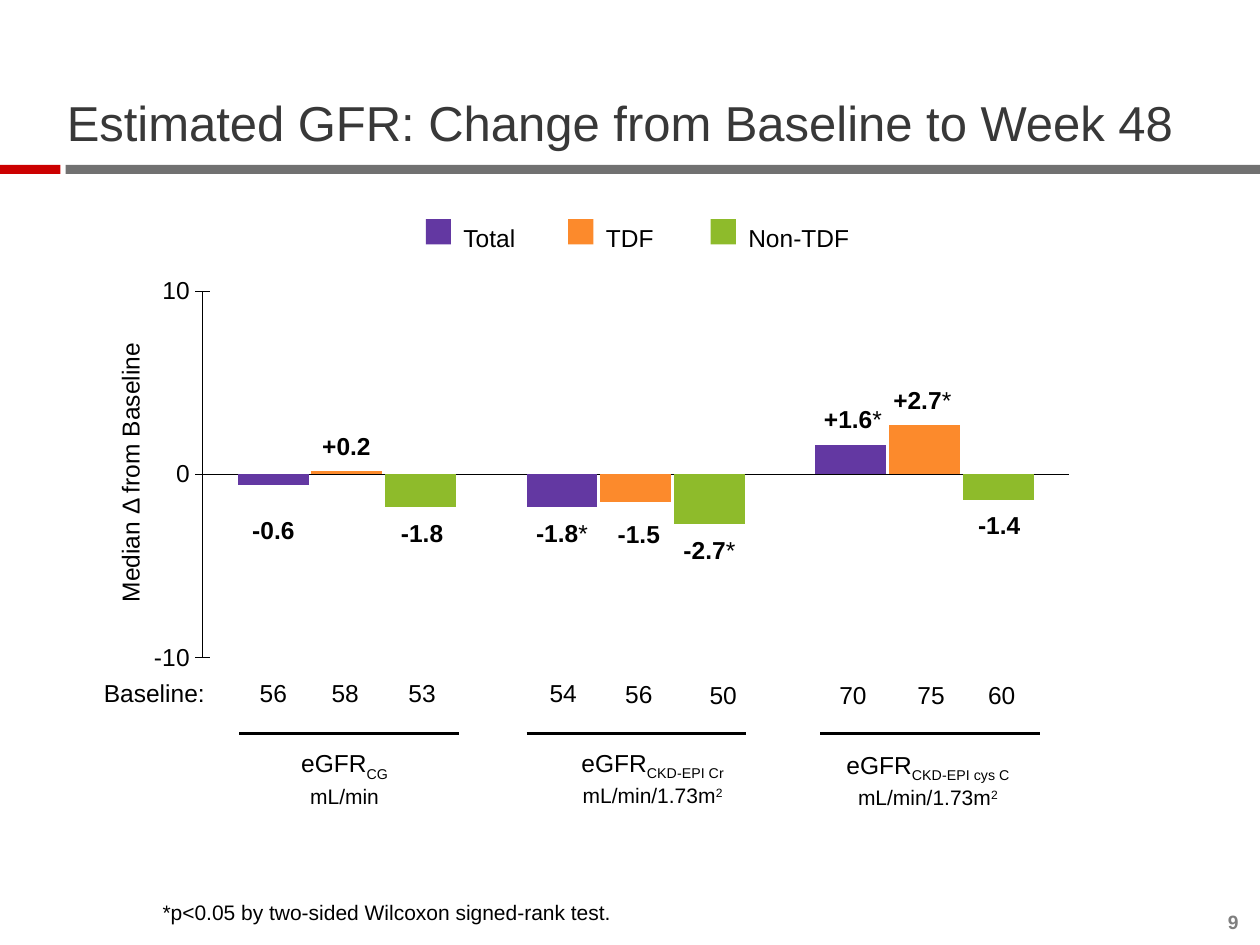
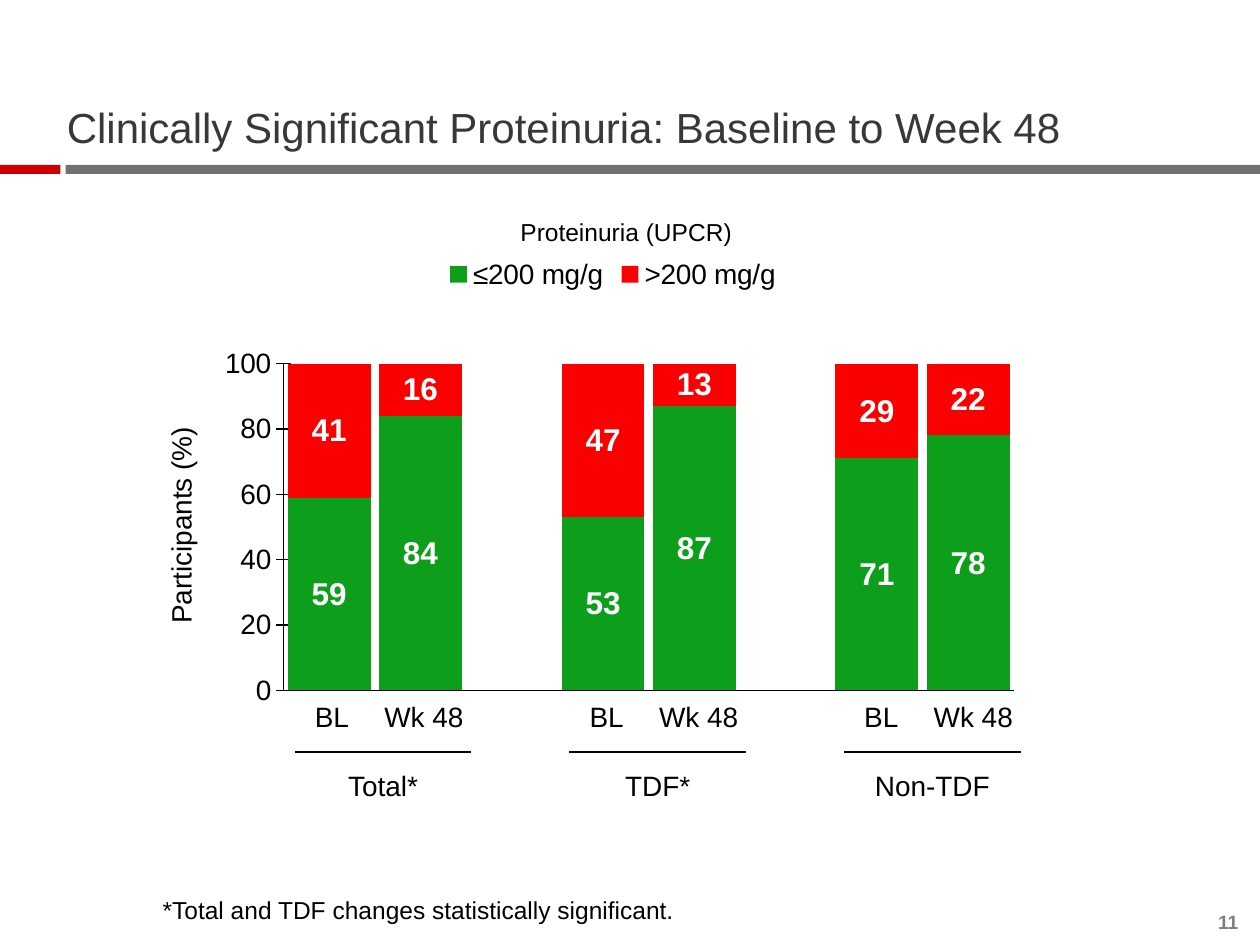
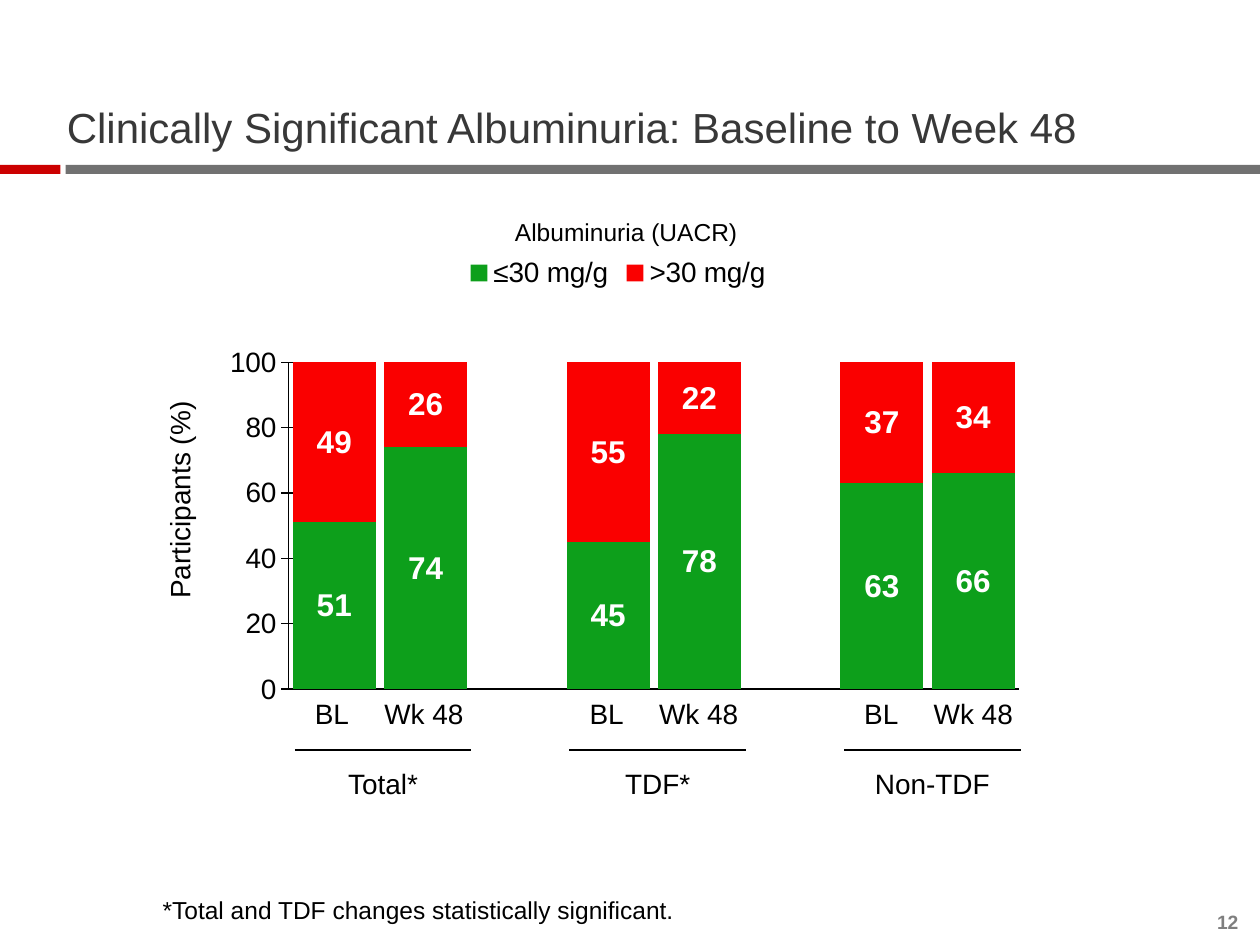
"""Build three slides on changes in kidney function from baseline to week 48."""
from dataclasses import dataclass

from lxml import etree
from pptx import Presentation
from pptx import util as u
from pptx.chart import data as chart_data
from pptx.dml import color
from pptx.enum import chart as charts, shapes, text
from pptx.oxml import ns


@dataclass(frozen=True)
class Theme:
    font: str = "Arial"
    chart_font: str = "Arial Narrow"
    ink: str = "000000"
    title: str = "383838"
    paper: str = "FFFFFF"
    number: str = "7F7F7F"
    grey_band: str = "717171"
    red_band: str = "CC0000"
    purple: str = "6338A2"
    orange: str = "FC8A2C"
    lime: str = "8EBB2B"
    green: str = "0D9F1B"
    red: str = "FA0000"
    title_large: int = 28
    title_small: int = 24
    label: int = 14
    large_label: int = 16
    bar_label: int = 18
    unit: int = 12
    page_number: int = 11


THEME = Theme()
ALIGN, ANCHOR = text.PP_ALIGN, text.MSO_ANCHOR

BANDS = [(0.52, 9.48, THEME.grey_band), (0, 0.48, THEME.red_band)]

GFR = {
    "title": "Estimated GFR: Change from Baseline to Week 48",
    "number": "9",
    "note": "*p<0.05 by two-sided Wilcoxon signed-rank test.",
    "axis": "Median Δ from Baseline",
    "legend": [("Total", THEME.purple), ("TDF", THEME.orange), ("Non-TDF", THEME.lime)],
    "series": [
        ("Series 1", [-0.6, -1.8, 1.6], THEME.purple),
        ("Series 2", [0.2, -1.5, 2.7], THEME.orange),
        ("Series 3", [-1.8, -2.7, -1.4], THEME.lime),
    ],
    "changes": [
        ("-0.6", "", 2.17, 4.01), ("+0.2", "", 2.75, 3.34), ("-1.8", "", 3.35, 4.03),
        ("-1.8", "*", 4.46, 4.03), ("-1.5", "", 5.07, 4.04), ("-2.7", "*", 5.63, 4.17),
        ("+1.6", "*", 6.77, 3.13), ("+2.7", "*", 7.32, 2.98), ("-1.4", "", 7.93, 3.97),
    ],
    "baselines": [
        ("56", 2.17, 5.3), ("58", 2.74, 5.3), ("53", 3.35, 5.3),
        ("54", 4.47, 5.3), ("56", 5.07, 5.31), ("50", 5.74, 5.32),
        ("70", 6.77, 5.32), ("75", 7.39, 5.32), ("60", 7.95, 5.32),
    ],
    "measures": [
        ("CG ", "mL/min", "", (2.13, 5.96, 1.21, 0.42), 1.9),
        ("CKD-EPI Cr ", "mL/min/1.73m", "2", (4.38, 5.95, 1.6, 0.43), 4.18),
        ("CKD-EPI cys C ", "mL/min/1.73m", "2", (6.51, 5.95, 1.71, 0.46), 6.51),
    ],
}

ARMS = ["Total*", "TDF*", "Non-TDF"]
VISITS = ["BL", "Wk 48"]
STACKED = [
    {
        "title": "Clinically Significant Proteinuria: Baseline to Week 48",
        "number": "11",
        "heading": "Proteinuria (UPCR)",
        "series": [
            ("≤200 mg/g", [59, 84, None, 53, 87, None, 71, 78], THEME.green),
            (">200 mg/g", [41, 16, None, 47, 13, None, 29, 22], THEME.red),
        ],
        "chart_at": (1.53, 1.94),
        "axis_at": (0.85, 3.96),
        "visits_top": 5.58,
    },
    {
        "title": "Clinically Significant Albuminuria: Baseline to Week 48",
        "number": "12",
        "heading": "Albuminuria (UACR)",
        "series": [
            ("≤30 mg/g", [51, 74, None, 45, 78, None, 63, 66], THEME.green),
            (">30 mg/g", [49, 26, None, 55, 22, None, 37, 34], THEME.red),
        ],
        "chart_at": (1.57, 1.93),
        "axis_at": (0.84, 3.76),
        "visits_top": 5.56,
    },
]
STACKED_NOTE = "*Total and TDF changes statistically significant."


def rgb(value):
    return color.RGBColor.from_string(value)


def inches(values):
    return [u.Inches(value) for value in values]


def style_font(font, size, ink=THEME.ink, bold=False, name=THEME.font):
    font.name, font.size, font.bold = name, u.Pt(size), bold
    font.color.rgb = rgb(ink)


def add_span(para, words, size, ink=THEME.ink, bold=False, base=0):
    span = para.add_run()
    span.text = words
    style_font(span.font, size, ink, bold)
    if base:
        span.font._element.set("baseline", str(base * 1000))


def set_frame(frame, anchor, inset=(0, 0), wrap=True):
    frame.auto_size = text.MSO_AUTO_SIZE.NONE
    frame.word_wrap = wrap
    frame.vertical_anchor = anchor
    frame.margin_left = frame.margin_right = u.Inches(inset[0])
    frame.margin_top = frame.margin_bottom = u.Inches(inset[1])


def add_rect(page, at, fill):
    rect = page.shapes.add_shape(shapes.MSO_SHAPE.RECTANGLE, *inches(at))
    rect.shadow.inherit = False
    rect.fill.solid()
    rect.fill.fore_color.rgb = rgb(fill)
    rect.line.fill.background()
    return rect


def add_text(page, at, spans, align=ALIGN.CENTER, anchor=ANCHOR.MIDDLE, inset=(0, 0),
             spacing=0.9, after=0, wrap=True, fill=None, turn=0):
    """Add a text box, or a filled rectangle, holding one paragraph of spans."""
    box = add_rect(page, at, fill) if fill else page.shapes.add_textbox(*inches(at))
    box.rotation = turn
    set_frame(box.text_frame, anchor, inset, wrap)
    para = box.text_frame.paragraphs[0]
    para.alignment, para.line_spacing, para.space_after = align, spacing, u.Pt(after)
    for span in spans:
        add_span(para, *span)


def add_rule(page, left, top, length, width):
    rule = page.shapes.add_connector(
        shapes.MSO_CONNECTOR.STRAIGHT, *inches((left, top, left + length, top)))
    rule.line.color.rgb = rgb(THEME.ink)
    rule.line.width = u.Pt(width)
    etree.SubElement(rule.element.spPr, ns.qn("a:effectLst"))


def add_page(deck, title, title_size, number, note, note_size):
    """Add a slide with its title, bands, footnote and page number."""
    page = deck.slides.add_slide(deck.slide_layouts[5])
    for left, width, fill in BANDS:
        add_rect(page, (left, 1.31, width, 0.07), fill)
    heading = page.shapes.title
    heading.left, heading.top, heading.width, heading.height = inches((0.53, 0.47, 9, 0.74))
    set_frame(heading.text_frame, ANCHOR.BOTTOM)
    para = heading.text_frame.paragraphs[0]
    para.alignment, para.line_spacing = ALIGN.LEFT, 0.9
    add_span(para, title, title_size, THEME.title)
    add_text(page, (9.56, 7.23, 0.27, 0.18),
             [(number, THEME.page_number, THEME.number, True)],
             ALIGN.RIGHT, ANCHOR.BOTTOM, spacing=1)
    add_text(page, (1.29, 6.84, 8.28, 0.5), [(note, note_size)],
             ALIGN.LEFT, ANCHOR.BOTTOM, spacing=1)
    return page


def set_plot_area(chart, bounds):
    plot_area = chart.element.find(".//" + ns.qn("c:plotArea"))
    for former in plot_area.findall(ns.qn("c:layout")):
        plot_area.remove(former)
    layout = etree.Element(ns.qn("c:layout"))
    manual = etree.SubElement(layout, ns.qn("c:manualLayout"))
    settings = [("layoutTarget", "inner"), ("xMode", "edge"), ("yMode", "edge")]
    settings += zip("xywh", bounds)
    for name, value in settings:
        etree.SubElement(manual, ns.qn("c:" + name)).set("val", str(value))
    plot_area.insert(0, layout)


def add_columns(page, kind, at, series, scale, gap, overlap, bounds, axis_size, font_name):
    """Add a column chart with a bare category axis and return it."""
    data = chart_data.CategoryChartData()
    data.categories = [str(index + 1) for index in range(len(series[0][1]))]
    for name, values, _ in series:
        data.add_series(name, values)
    chart = page.shapes.add_chart(kind, *inches(at), data).chart
    style_font(chart.font, THEME.bar_label, name=font_name)
    chart.has_title = chart.has_legend = False
    plot = chart.plots[0]
    plot.gap_width, plot.overlap, plot.vary_by_categories = gap, overlap, False
    for column, (_, _, fill) in zip(plot.series, series):
        column.invert_if_negative = False
        column.format.fill.solid()
        column.format.fill.fore_color.rgb = rgb(fill)
    for axis in (chart.category_axis, chart.value_axis):
        axis.has_major_gridlines = False
        axis.format.line.color.rgb = rgb(THEME.ink)
        axis.format.line.width = u.Pt(0.75)
    chart.category_axis.major_tick_mark = charts.XL_TICK_MARK.NONE
    chart.category_axis.tick_label_position = charts.XL_TICK_LABEL_POSITION.NONE
    axis = chart.value_axis
    axis.minimum_scale, axis.maximum_scale, axis.major_unit = scale
    axis.major_tick_mark = charts.XL_TICK_MARK.CROSS
    style_font(axis.tick_labels.font, axis_size)
    set_plot_area(chart, bounds)
    return chart


def build_gfr(deck):
    page = add_page(deck, GFR["title"], THEME.title_large, GFR["number"],
                    GFR["note"], THEME.unit)
    add_columns(page, charts.XL_CHART_TYPE.COLUMN_CLUSTERED, (0.98, 1.98, 7.55, 3.69),
                GFR["series"], (-10, 10, 10), 100, -4, (0.083, 0.09, 0.911, 0.788),
                THEME.label, THEME.chart_font)
    add_text(page, (-0.43, 3.58, 2.98, 0.34), [(GFR["axis"], THEME.label)],
             anchor=ANCHOR.TOP, inset=(0.1, 0.05), turn=270)
    for index, (name, fill) in enumerate(GFR["legend"]):
        left = 3.38 + index * 1.13
        add_rect(page, (left, 1.74, 0.2, 0.2), fill)
        add_text(page, (left + 0.2, 1.67, 1.08, 0.31), [(name, THEME.label)],
                 ALIGN.LEFT, inset=(0.1, 0), spacing=1.5)
    add_text(page, (0.35, 5.3, 1.75, 0.42), [("Baseline:", THEME.label)],
             inset=(0.1, 0.1), fill=THEME.paper)
    for value, center, top in GFR["baselines"]:
        add_text(page, (center - 0.36, top, 0.72, 0.42), [(value, THEME.label)])
    for value, star, center, top in GFR["changes"]:
        spans = [(value, THEME.label, THEME.ink, True)]
        if star:
            spans.append((star, THEME.label))
        add_text(page, (center - 0.34, top, 0.68, 0.42), spans, inset=(0.05, 0.1))
    for method, unit, power, at, rule_left in GFR["measures"]:
        spans = [("eGFR", THEME.label),
                 (method, THEME.label, THEME.ink, False, -25), (unit, THEME.unit)]
        if power:
            spans.append((power, THEME.unit, THEME.ink, False, 30))
        add_text(page, at, spans, inset=(0.1, 0.1), spacing=1.07, after=8, fill=THEME.paper)
        add_rule(page, rule_left, 5.82, 1.74, 1.75)


def build_stacked(deck, content):
    page = add_page(deck, content["title"], THEME.title_small, content["number"],
                    STACKED_NOTE, THEME.label)
    chart = add_columns(page, charts.XL_CHART_TYPE.COLUMN_STACKED,
                        (*content["chart_at"], 6.67, 4.85), content["series"],
                        (0, 100, 20), 10, 100, (0.108, 0.195, 0.869, 0.535),
                        THEME.large_label, THEME.font)
    chart.has_legend = True
    chart.legend.position = charts.XL_LEGEND_POSITION.TOP
    chart.legend.include_in_layout = False
    style_font(chart.legend.font, THEME.large_label)
    for column in chart.plots[0].series:
        labels = column.data_labels
        labels.show_value = True
        labels.position = charts.XL_LABEL_POSITION.CENTER
        style_font(labels.font, THEME.bar_label, THEME.paper, True)
    add_text(page, (*content["axis_at"], 1.38, 0.42),
             [("Participants (%)", THEME.large_label)],
             anchor=ANCHOR.TOP, wrap=False, turn=270)
    top = content["visits_top"]
    for index, arm in enumerate(ARMS):
        left = 2.3 + index * 2.18
        for step, visit in enumerate(VISITS):
            add_text(page, (left + step * 0.73, top, 0.67, 0.39),
                     [(visit, THEME.large_label)], anchor=ANCHOR.TOP, wrap=False)
        add_rule(page, left + 0.04, top + 0.39, 1.4, 1)
        add_text(page, (left + 0.24, top + 0.51, 1, 0.32),
                 [(arm, THEME.large_label)], wrap=False)
    add_text(page, (3.86, 1.71, 2.22, 0.28), [(content["heading"], THEME.label)],
             inset=(0.1, 0.1), fill=THEME.paper)


def main():
    deck = Presentation()
    deck.slide_width, deck.slide_height = inches((10, 7.5))
    build_gfr(deck)
    for content in STACKED:
        build_stacked(deck, content)
    deck.save("out.pptx")


if __name__ == "__main__":
    main()
